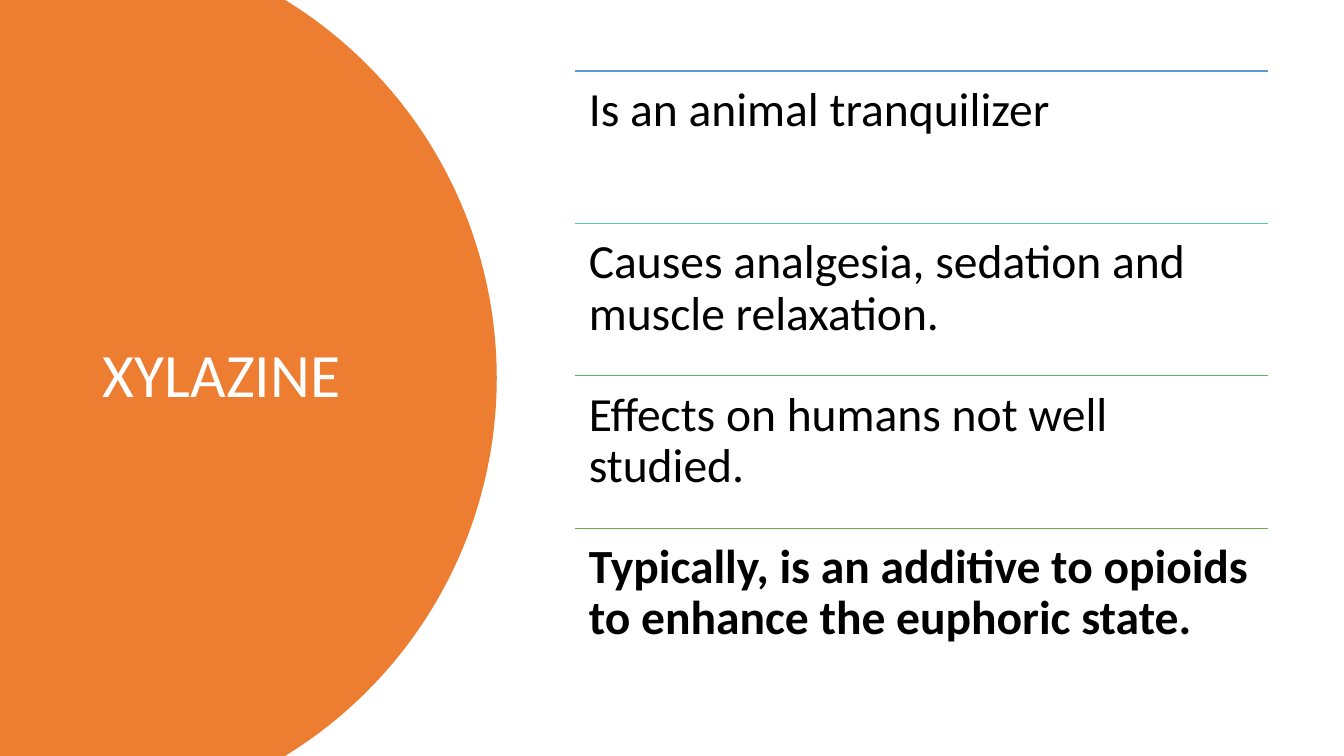
"""Build the Xylazine fact slide."""
import math

import pptx
import pptx.dml.color
import pptx.enum.shapes
import pptx.enum.text
import pptx.oxml
import pptx.util

Cm, Pt = pptx.util.Cm, pptx.util.Pt

TITLE = "XYLAZINE"
FACTS = [
    ("Is an animal tranquilizer", "5B9BD5", False),
    ("Causes analgesia, sedation and muscle relaxation.", "52CAB8", False),
    ("Effects on humans not well studied.", "49BF64", False),
    ("Typically, is an additive to opioids to enhance the euphoric state.", "70AD47", True),
]
SLIDE_W, SLIDE_H = 33.87, 19.05
CENTER_X, RADIUS, ARC_STEPS = 1.35, 11.17, 120
LIST_X, LIST_Y, LIST_W, ROW_H = 14.48, 1.79, 17.47, 3.84


def color(value):
    return pptx.dml.color.RGBColor.from_string(value)


def no_shadow(line):
    line._element.spPr.append(pptx.oxml.parse_xml(
        '<a:effectLst xmlns:a="http://schemas.openxmlformats.org/drawingml/2006/main"/>'))


def add_text(slide, box, text, size, hex_color, bold=False):
    tf = slide.shapes.add_textbox(*map(Cm, box)).text_frame
    tf.word_wrap = True
    p = tf.paragraphs[0]
    p.text = text
    p.line_spacing = 0.9
    p.font.name, p.font.size, p.font.bold = "Calibri", Pt(size), bold
    p.font.color.rgb = color(hex_color)
    return tf


def add_panel(slide):
    half = math.asin(SLIDE_H / 2 / RADIUS)
    angles = [half * (2 * i / ARC_STEPS - 1) for i in range(ARC_STEPS + 1)]
    arc = [(Cm(CENTER_X + RADIUS * math.cos(a)), Cm(SLIDE_H / 2 + RADIUS * math.sin(a)))
           for a in angles]
    builder = slide.shapes.build_freeform(0, 0)
    builder.add_line_segments(arc + [(0, Cm(SLIDE_H))], close=True)
    sp = builder.convert_to_shape()
    sp.shadow.inherit = False
    sp.fill.solid()
    sp.fill.fore_color.rgb = color("ED7D31")
    sp.line.fill.background()


def add_fact(slide, row, text, hex_color, bold):
    y = LIST_Y + row * ROW_H
    line = slide.shapes.add_connector(
        pptx.enum.shapes.MSO_CONNECTOR.STRAIGHT,
        Cm(LIST_X), Cm(y), Cm(LIST_X + LIST_W), Cm(y))
    line.line.color.rgb = color(hex_color)
    line.line.width = Pt(1)
    no_shadow(line)
    tf = add_text(slide, (LIST_X, y, LIST_W, ROW_H), text, 34, "000000", bold)
    tf.margin_left = tf.margin_right = tf.margin_top = tf.margin_bottom = Cm(0.36)


def main():
    prs = pptx.Presentation()
    prs.slide_width, prs.slide_height = Cm(SLIDE_W), Cm(SLIDE_H)
    slide = prs.slides.add_slide(prs.slide_layouts[6])
    add_panel(slide)
    title = add_text(slide, (2.34, 1.78, 8.2, 15.47), TITLE, 44, "FFFFFF")
    title.vertical_anchor = pptx.enum.text.MSO_ANCHOR.MIDDLE
    for row, fact in enumerate(FACTS):
        add_fact(slide, row, *fact)
    prs.save("out.pptx")


if __name__ == "__main__":
    main()
